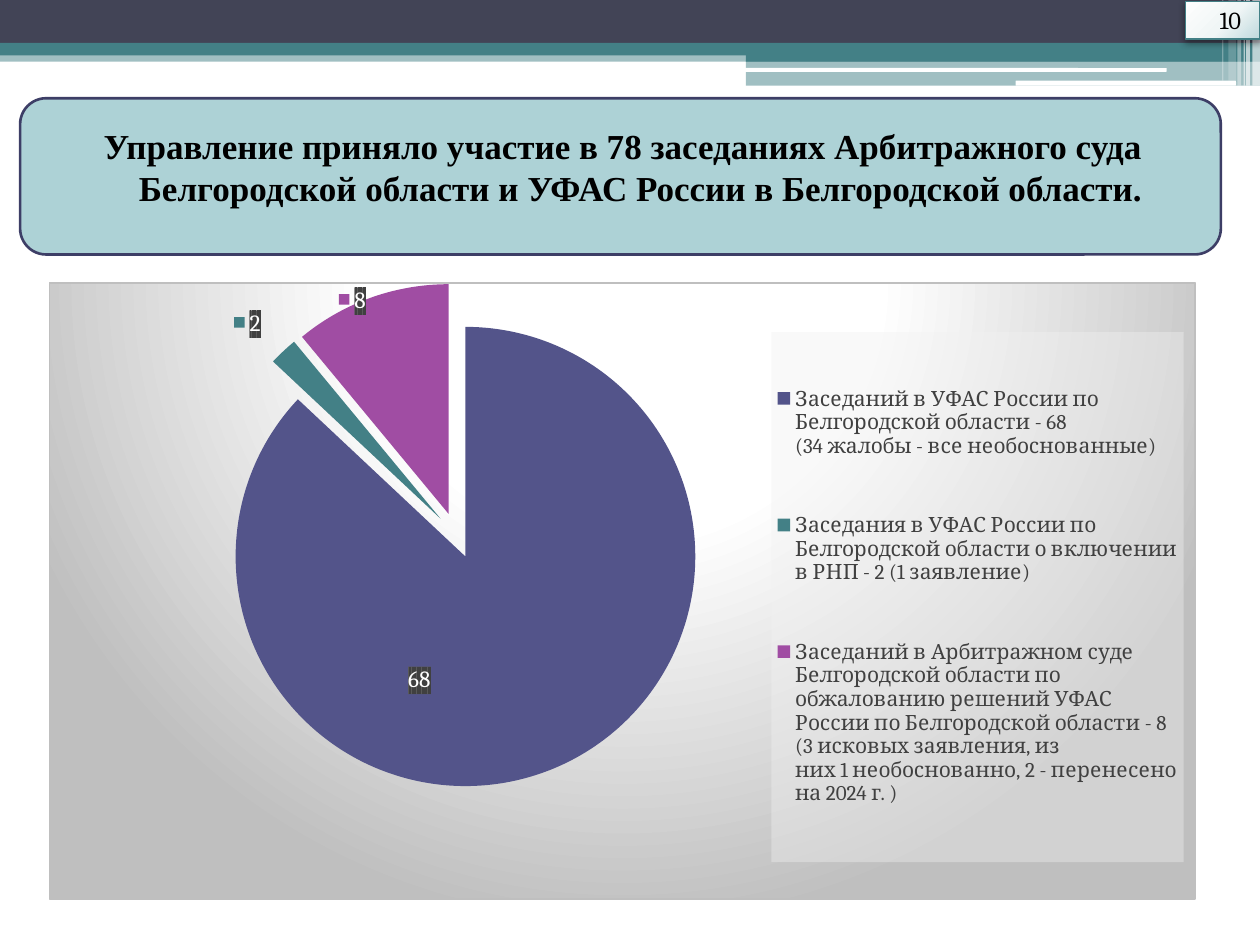
import pptx
import pptx.chart.data
import pptx.dml.color
import pptx.enum.chart
import pptx.enum.shapes
import pptx.enum.text
import pptx.oxml
import pptx.oxml.ns
import pptx.util

COLS, ROWS = 1000, 750
WIDE, HIGH = pptx.util.Inches(10), pptx.util.Inches(7.5)
HUES = {
    "white": "FFFFFF", "black": "000000", "slate": "424456", "teal": "438086",
    "panel": "ADD2D6", "edge": "3D3E66", "blue": "53548A", "plum": "A04DA3",
    "grey": "BFBFBF", "text": "404040", "tag": "595959", "pale": "F2F2F2",
    "frost": "FEFEFE", "mist": "F0F6F6", "aqua": "BFD9DD",
}
NAMES = (
    'xmlns:a="http://schemas.openxmlformats.org/drawingml/2006/main" '
    'xmlns:c="http://schemas.openxmlformats.org/drawingml/2006/chart"'
)
KIND = pptx.enum.shapes.MSO_SHAPE

# column, row, columns, rows, hue, opacity in percent
BARS = [
    (0, 40, 1000, 9, "teal", 50),
    (0, 0, 1000, 34, "slate", 100),
    (0, 34, 1000, 10, "teal", 100),
    (592, 39, 408, 10, "teal", 100),
    (592, 48, 408, 20, "teal", 50),
]
PILLS = [(591, 54, 335, 3), (806, 64, 175, 4)]
# column, columns, rows, opacity in percent
STRIPES = [(994, 6, 68, 65), (989, 3, 68, 65), (987, 1, 68, 60),
           (982, 3, 68, 40), (975, 6, 64, 20), (970, 1, 64, 30)]

TITLE = ("Управление приняло участие в 78 заседаниях Арбитражного суда "
         "Белгородской области и УФАС России в Белгородской области.")
# legend text, share, label, hue, label shift, legend key beside label
SLICES = [
    ("Заседаний в УФАС России по Белгородской области - 68\n"
     "(34 жалобы - все необоснованные)",
     0.87, "68", "blue", (-0.08, 0.03), 0),
    ("Заседания в УФАС России по Белгородской области о включении "
     "в РНП - 2 (1 заявление)",
     0.02, "2", "teal", (-0.1, -0.18), 1),
    ("Заседаний в Арбитражном суде Белгородской области по обжалованию "
     "решений УФАС России по Белгородской области - 8\n"
     "(3 исковых заявления, из\nних 1 необоснованно, 2 - перенесено\n"
     "на 2024 г. )",
     0.11, "8", "plum", (-0.05, -0.17), 1),
]


def place(col, row, cols, rows):
    """Turn grid cells into slide lengths."""
    return (int(WIDE * col / COLS), int(HIGH * row / ROWS),
            int(WIDE * cols / COLS), int(HIGH * rows / ROWS))


def tint(hue):
    return pptx.dml.color.RGBColor.from_string(HUES[hue])


def parts(body):
    """Parse XML elements that share the drawing and chart prefixes."""
    return list(pptx.oxml.parse_xml(f"<a:root {NAMES}>{body}</a:root>"))


def ink(hue, share=100):
    return f'<a:srgbClr val="{HUES[hue]}"><a:alpha val="{share * 1000}"/></a:srgbClr>'


def glow(stops, rect):
    """Radial gradient; rect gives left, top, right, bottom in percent."""
    marks = "".join(f'<a:gs pos="{at * 1000}">{ink(hue)}</a:gs>' for at, hue in stops)
    sides = " ".join(f'{k}="{v * 1000}"' for k, v in zip("ltrb", rect))
    return (f'<a:gradFill rotWithShape="1"><a:gsLst>{marks}</a:gsLst>'
            f'<a:path path="circle"><a:fillToRect {sides}/></a:path></a:gradFill>')


def layout(x, y, w=None, h=None):
    """Manual chart layout, as shares of the chart's size."""
    mode = "" if w is None else '<c:xMode val="edge"/><c:yMode val="edge"/>'
    size = "" if w is None else f'<c:w val="{w}"/><c:h val="{h}"/>'
    return (f'<c:manualLayout>{mode}<c:x val="{x}"/><c:y val="{y}"/>{size}'
            '</c:manualLayout>')


def child(node, tag):
    return node.find(pptx.oxml.ns.qn(tag))


def drop(node, tag):
    old = child(node, tag)
    if old is not None:
        node.remove(old)


def style(font, size, hue, face="Cambria", bold=False):
    font.size, font.name, font.bold = pptx.util.Pt(size), face, bold
    font.color.rgb = tint(hue)


def block(slide, cells, hue, share=100, kind=KIND.RECTANGLE, line=None, width=1):
    shape = slide.shapes.add_shape(kind, *place(*cells))
    shape.shadow.inherit = False
    shape.fill.solid()
    shape.fill.fore_color.rgb = tint(hue)
    if share < 100:
        paint = child(shape.element.spPr, "a:solidFill")
        paint[0].extend(parts(f'<a:alpha val="{share * 1000}"/>'))
    if line:
        shape.line.color.rgb = tint(line)
        shape.line.width = pptx.util.Pt(width)
    else:
        shape.line.fill.background()
    return shape


def write(shape, text, left, hang, **look):
    """Centred paragraph with a left margin and first-line indent in inches."""
    frame = shape.text_frame
    frame.word_wrap = True
    frame.vertical_anchor = pptx.enum.text.MSO_ANCHOR.MIDDLE
    para = frame.paragraphs[0]
    para.alignment = pptx.enum.text.PP_ALIGN.CENTER
    props = para._p.get_or_add_pPr()
    props.set("marL", str(pptx.util.Inches(left)))
    props.set("indent", str(pptx.util.Inches(hang)))
    run = para.add_run()
    run.text = text
    style(run.font, **look)
    return para


def header(slide):
    for *cells, hue, share in BARS:
        block(slide, cells, hue, share)
    for cells in PILLS:
        block(slide, cells, "white", kind=KIND.ROUNDED_RECTANGLE)
    for col, cols, rows, share in STRIPES:
        block(slide, (col, 0, cols, rows), "white", share)


def title(slide):
    shape = block(slide, (16, 78, 953, 124), "panel", kind=KIND.ROUNDED_RECTANGLE,
                  line="edge", width=1.5)
    write(shape, TITLE, 0.4, -0.28, size=20, hue="black",
          face="Times New Roman", bold=True)
    shape.text_frame.margin_bottom = pptx.util.Inches(0.2)
    shape.text_frame.margin_right = pptx.util.Inches(0.18)


def badge(slide):
    shape = block(slide, (941, 1, 59, 30), "mist", line="teal", width=0.75)
    props = shape.element.spPr
    shine = glow([(0, "frost"), (55, "mist"), (100, "aqua")], (-40, -90, 140, 190))
    props.replace(child(props, "a:solidFill"), parts(shine)[0])
    child(props, "a:effectLst").extend(parts(
        '<a:outerShdw blurRad="52000" dist="25400" dir="5400000">'
        f'{ink("black", 40)}</a:outerShdw>'))
    para = write(shape, "10", 0.12, 0, size=14, hue="black")
    para.space_before = pptx.util.Pt(3)


def label(point, text, shift, key):
    tag = point.data_label
    run = tag.text_frame.paragraphs[0].add_run()
    run.text = text
    style(run.font, 13.3, "white")
    tag.position = pptx.enum.chart.XL_LABEL_POSITION.CENTER
    node = tag.text_frame._txBody.getparent().getparent()
    spot, fill = parts(
        f'<c:layout>{layout(*shift)}</c:layout>'
        f'<c:spPr><a:pattFill prst="dkVert"><a:fgClr>{ink("text")}</a:fgClr>'
        f'<a:bgClr>{ink("tag")}</a:bgClr></a:pattFill></c:spPr>')
    child(node, "c:idx").addnext(spot)
    child(node, "c:tx").addnext(fill)
    child(node, "c:showLegendKey").set("val", str(key))


def legend(chart):
    chart.has_legend = True
    box = chart.legend
    box.position = pptx.enum.chart.XL_LEGEND_POSITION.RIGHT
    box.include_in_layout = False
    style(box.font, 12, "text")
    node = box._element
    drop(node, "c:layout")
    spot, fill = parts(
        f'<c:layout>{layout(0.63, 0.08, 0.36, 0.86)}</c:layout>'
        f'<c:spPr><a:solidFill>{ink("pale", 39)}</a:solidFill></c:spPr>')
    child(node, "c:legendPos").addnext(spot)
    child(node, "c:overlay").addnext(fill)


def pie(slide):
    data = pptx.chart.data.CategoryChartData()
    data.categories = [item[0] for item in SLICES]
    data.add_series("Series 1", [item[1] for item in SLICES])
    chart = slide.shapes.add_chart(
        pptx.enum.chart.XL_CHART_TYPE.PIE, *place(39, 224, 910, 490), data).chart
    chart.has_title = False
    style(chart.font, 10, "black")
    plot = chart.plots[0]
    plot.vary_by_categories = True
    series = plot.series[0]
    for index, (_, _, text, hue, shift, key) in enumerate(SLICES):
        point = series.points[index]
        point.format.fill.solid()
        point.format.fill.fore_color.rgb = tint(hue)
        label(point, text, shift, key)
    tags = series.data_labels
    tags.show_value = tags.show_percentage = True
    drop(tags._element, "c:showLeaderLines")
    tags._element.extend(parts('<c:showLeaderLines val="0"/>'))
    child(series._element, "c:dPt").addprevious(parts('<c:explosion val="10"/>')[0])
    legend(chart)

    area = child(chart.element.chart, "c:plotArea")
    drop(area, "c:layout")
    spot = layout(0.02, 0, 0.67, 0.82).replace(
        "<c:manualLayout>", '<c:manualLayout><c:layoutTarget val="inner"/>')
    area.insert(0, parts(f"<c:layout>{spot}</c:layout>")[0])
    shine = glow([(0, "white"), (39, "white"), (100, "grey")], (50, -80, 50, 180))
    chart.element.chart.addnext(parts(
        f'<c:spPr>{shine}<a:ln w="9525"><a:solidFill>{ink("grey")}</a:solidFill>'
        '</a:ln></c:spPr>')[0])


def main():
    deck = pptx.Presentation()
    deck.slide_width, deck.slide_height = WIDE, HIGH
    slide = deck.slides.add_slide(deck.slide_layouts[6])
    header(slide)
    title(slide)
    pie(slide)
    badge(slide)
    deck.save("out.pptx")


if __name__ == "__main__":
    main()
